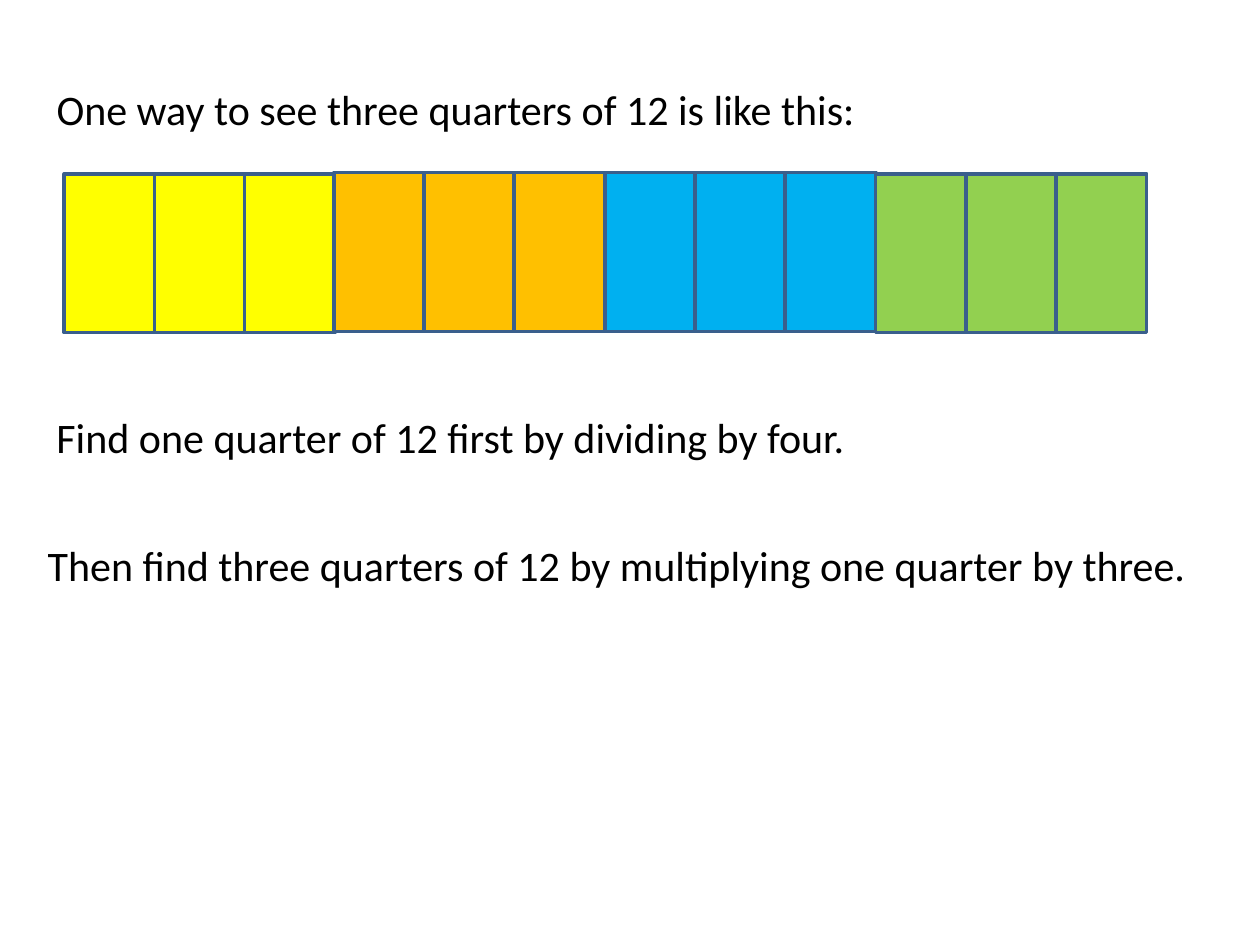
"""Build a slide that shows three quarters of 12 as coloured blocks."""
from dataclasses import dataclass

import pptx
import pptx.dml.color
import pptx.enum.shapes
import pptx.enum.text
import pptx.shapes.shapetree
import pptx.slide
import pptx.util

CELLS_PER_QUARTER = 3
CELL_PITCH = 51.5
CELL_WIDTH = 51.84
CELL_HEIGHT = 90.72


@dataclass
class Sentence:
    text: str
    left: float
    top: float
    width: float


@dataclass
class Quarter:
    left: float
    top: float
    fill: str


SENTENCES = [
    Sentence("One way to see three quarters of 12 is like this:", 25.2, 43.92, 668.88),
    Sentence("Find one quarter of 12 first by dividing by four.", 25.2, 231.84, 702.72),
    Sentence(
        "Then find three quarters of 12 by multiplying one quarter by three.",
        20.16, 304.56, 702.72,
    ),
]
QUARTERS = [
    Quarter(36.72, 99.36, "FFFF00"),
    Quarter(190.8, 98.64, "FFC000"),
    Quarter(345.6, 98.64, "00B0F0"),
    Quarter(500.4, 99.36, "92D050"),
]


def color(value: str) -> pptx.dml.color.RGBColor:
    return pptx.dml.color.RGBColor.from_string(value)


def draw_sentence(slide: pptx.slide.Slide, sentence: Sentence) -> None:
    points = pptx.util.Pt
    shape = slide.shapes.add_textbox(
        points(sentence.left), points(sentence.top), points(sentence.width), points(36)
    )
    text_frame = shape.text_frame
    text_frame.word_wrap = True
    text_frame.auto_size = pptx.enum.text.MSO_AUTO_SIZE.SHAPE_TO_FIT_TEXT
    text_frame.text = sentence.text
    font = text_frame.paragraphs[0].runs[0].font
    font.name = "Calibri"
    font.size = points(24)
    font.color.rgb = color("000000")


def draw_cell(
    shapes: pptx.shapes.shapetree.GroupShapes, left: float, top: float, fill: str
) -> None:
    points = pptx.util.Pt
    shape = shapes.add_shape(
        pptx.enum.shapes.MSO_SHAPE.RECTANGLE,
        points(left), points(top), points(CELL_WIDTH), points(CELL_HEIGHT),
    )
    shape.shadow.inherit = False
    shape.fill.solid()
    shape.fill.fore_color.rgb = color(fill)
    shape.line.color.rgb = color("3A5F8C")
    shape.line.width = points(2)


def draw_quarter(slide: pptx.slide.Slide, quarter: Quarter) -> None:
    group = slide.shapes.add_group_shape()
    for index in range(CELLS_PER_QUARTER):
        left = quarter.left + index * CELL_PITCH
        draw_cell(group.shapes, left, quarter.top, quarter.fill)


def main() -> None:
    presentation = pptx.Presentation()
    presentation.slide_width = pptx.util.Pt(720)
    presentation.slide_height = pptx.util.Pt(540)
    slide = presentation.slides.add_slide(presentation.slide_layouts[6])
    for sentence in SENTENCES:
        draw_sentence(slide, sentence)
    for quarter in QUARTERS:
        draw_quarter(slide, quarter)
    presentation.save("out.pptx")


if __name__ == "__main__":
    main()
